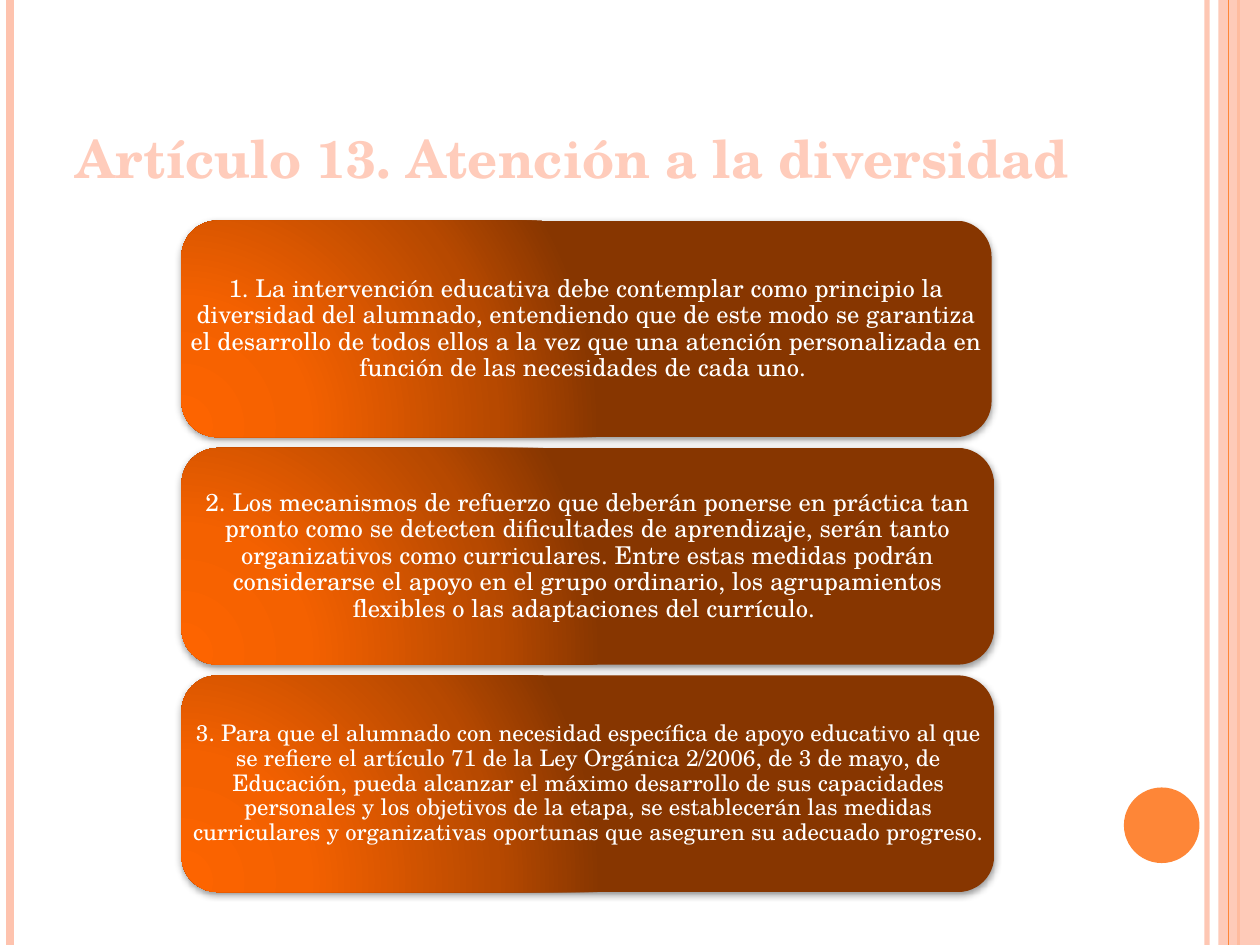
"""Build the slide on Article 13, attention to diversity."""
import dataclasses

import lxml.etree
import pptx
import pptx.dml.color
import pptx.enum.shapes
import pptx.enum.text
import pptx.oxml
import pptx.oxml.ns
import pptx.util

Inches = pptx.util.Inches
FONT = "TeX Gyre Schola"
PEACH, ORANGE, WHITE = "FEC3AE", "FE8637", "FFFFFF"
CARD_STOPS = ((0, "FD6400"), (30, "F46100"), (75, "B74900"), (100, "873600"))
CARD_LEFT, CARD_TOP, CARD_HEIGHT, CARD_PITCH = 1.44, 1.75, 1.72, 1.805


@dataclasses.dataclass(frozen=True)
class Stripe:
    x: float
    color: str
    weight: float
    opacity: int = 100


@dataclasses.dataclass(frozen=True)
class Card:
    text: str
    width: float = 6.45
    size: float = 14
    side_inset: float = 0.06


LEFT_STRIPES = (
    Stripe(9.58, PEACH, 3, 93),
    Stripe(0.08, PEACH, 4.5),
    Stripe(9.83, ORANGE, 1.5),
)
INNER_STRIPE = Stripe(9.75, ORANGE, 0.75)

CARDS = (
    Card(
        "1. La intervención educativa debe contemplar como principio la diversidad del alumnado, "
        "entendiendo que de este modo se garantiza el desarrollo de todos ellos a la vez que una "
        "atención personalizada en función de las necesidades de cada uno. ",
        width=6.43,
    ),
    Card(
        "2. Los mecanismos de refuerzo que deberán ponerse en práctica tan pronto como se detecten "
        "dificultades de aprendizaje, serán tanto organizativos como curriculares. Entre estas "
        "medidas podrán considerarse el apoyo en el grupo ordinario, los agrupamientos flexibles "
        "o las adaptaciones del currículo. ",
    ),
    Card(
        "3. Para que el alumnado con necesidad específica de apoyo educativo al que se refiere el "
        "artículo 71 de la Ley Orgánica 2/2006, de 3 de mayo, de Educación, pueda alcanzar el "
        "máximo desarrollo de sus capacidades personales y los objetivos de la etapa, se "
        "establecerán las medidas curriculares y organizativas oportunas que aseguren su adecuado "
        "progreso.",
        size=13,
        side_inset=0.05,
    ),
)


def rgb(color: str) -> pptx.dml.color.RGBColor:
    return pptx.dml.color.RGBColor.from_string(color)


def parse(xml: str):
    return pptx.oxml.parse_xml(xml.replace(">", f" {pptx.oxml.ns.nsdecls('a')}>", 1))


def set_opacity(properties, percent: int) -> None:
    color = next(properties.iter(pptx.oxml.ns.qn("a:srgbClr")))
    alpha = lxml.etree.SubElement(color, pptx.oxml.ns.qn("a:alpha"))
    alpha.set("val", str(percent * 1000))


def write(frame, text: str, *, size: float, color: str, bold: bool = False,
          align=pptx.enum.text.PP_ALIGN.LEFT, anchor=pptx.enum.text.MSO_ANCHOR.MIDDLE,
          insets: tuple[float, float] = (0.1, 0.05), spacing: float = 1.0) -> None:
    frame.word_wrap = True
    frame.auto_size = pptx.enum.text.MSO_AUTO_SIZE.NONE
    frame.vertical_anchor = anchor
    frame.margin_left = frame.margin_right = Inches(insets[0])
    frame.margin_top = frame.margin_bottom = Inches(insets[1])
    paragraph = frame.paragraphs[0]
    paragraph.alignment = align
    paragraph.line_spacing = spacing
    run = paragraph.add_run()
    run.text = text
    run.font.name = FONT
    run.font.size = pptx.util.Pt(size)
    run.font.bold = bold
    run.font.color.rgb = rgb(color)


def draw_stripe(slide, stripe: Stripe) -> None:
    line = slide.shapes.add_connector(
        pptx.enum.shapes.MSO_CONNECTOR.STRAIGHT,
        Inches(stripe.x), Inches(0), Inches(stripe.x), Inches(7.5))
    line.line.color.rgb = rgb(stripe.color)
    line.line.width = pptx.util.Pt(stripe.weight)
    properties = line._element.spPr
    if stripe.opacity < 100:
        set_opacity(properties, stripe.opacity)
    properties.append(parse("<a:effectLst></a:effectLst>"))


def draw_shape(slide, preset, box: tuple[float, ...], color: str | None = None):
    shape = slide.shapes.add_shape(preset, *map(Inches, box))
    shape.shadow.inherit = False
    shape.line.fill.background()
    if color:
        shape.fill.solid()
        shape.fill.fore_color.rgb = rgb(color)
    return shape


def draw_card(slide, card: Card, top: float) -> None:
    box = (CARD_LEFT, top, card.width, CARD_HEIGHT)
    panel = draw_shape(slide, pptx.enum.shapes.MSO_SHAPE.ROUNDED_RECTANGLE, box)
    stops = "".join(f'<a:gs pos="{position * 1000}"><a:srgbClr val="{color}"/></a:gs>'
                    for position, color in CARD_STOPS)
    properties = panel._element.spPr
    properties.find(pptx.oxml.ns.qn("a:prstGeom")).addnext(parse(
        f'<a:gradFill rotWithShape="1"><a:gsLst>{stops}</a:gsLst><a:path path="circle">'
        '<a:fillToRect l="5000" t="100000" r="120000" b="10000"/></a:path></a:gradFill>'))
    blur, distance = pptx.util.Pt(4), pptx.util.Pt(1.6)
    properties.find(pptx.oxml.ns.qn("a:effectLst")).append(parse(
        f'<a:outerShdw blurRad="{blur}" dist="{distance}" dir="5400000" rotWithShape="0">'
        '<a:srgbClr val="000000"><a:alpha val="42000"/></a:srgbClr></a:outerShdw>'))
    caption = slide.shapes.add_textbox(*map(Inches, box))
    write(caption.text_frame, card.text, size=card.size, color=WHITE,
          align=pptx.enum.text.PP_ALIGN.CENTER, insets=(card.side_inset, 0.03), spacing=0.9)


def main() -> None:
    deck = pptx.Presentation()
    deck.slide_width, deck.slide_height = Inches(10), Inches(7.5)
    slide = deck.slides.add_slide(deck.slide_layouts[5])

    for stripe in LEFT_STRIPES:
        draw_stripe(slide, stripe)
    band = draw_shape(slide, pptx.enum.shapes.MSO_SHAPE.RECTANGLE, (9.67, 0, 0.33, 7.5), PEACH)
    set_opacity(band._element.spPr, 87)
    draw_stripe(slide, INNER_STRIPE)
    draw_shape(slide, pptx.enum.shapes.MSO_SHAPE.OVAL, (8.92, 6.25, 0.6, 0.6), ORANGE)

    title = slide.shapes.title
    title.left, title.top, title.width, title.height = map(Inches, (0.5, 0.3, 8.17, 1.25))
    write(title.text_frame, "Artículo 13. Atención a la diversidad", size=30, color="FFCCBB",
          bold=True, anchor=pptx.enum.text.MSO_ANCHOR.BOTTOM)

    for index, card in enumerate(CARDS):
        draw_card(slide, card, CARD_TOP + index * CARD_PITCH)
    deck.save("out.pptx")


if __name__ == "__main__":
    main()
